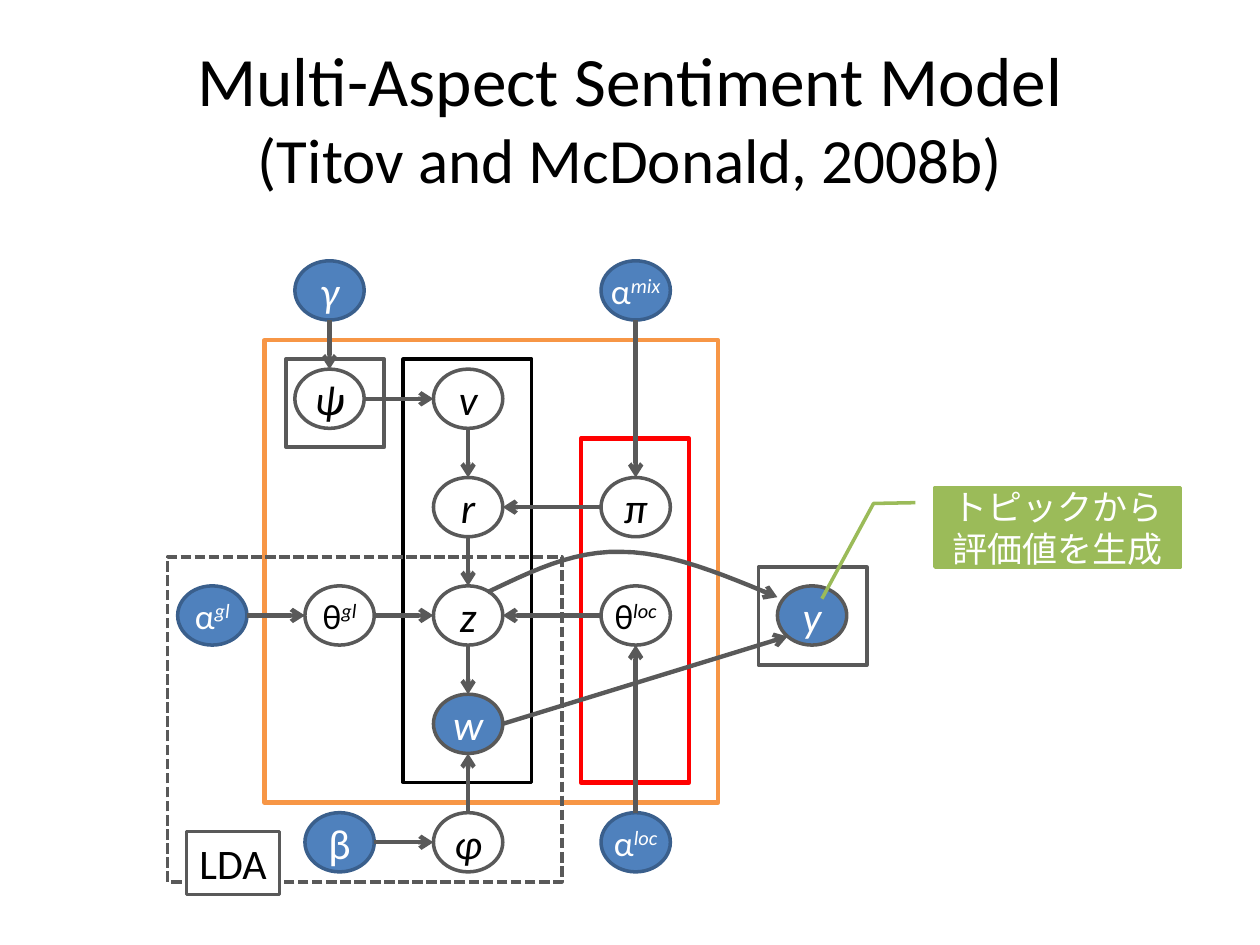
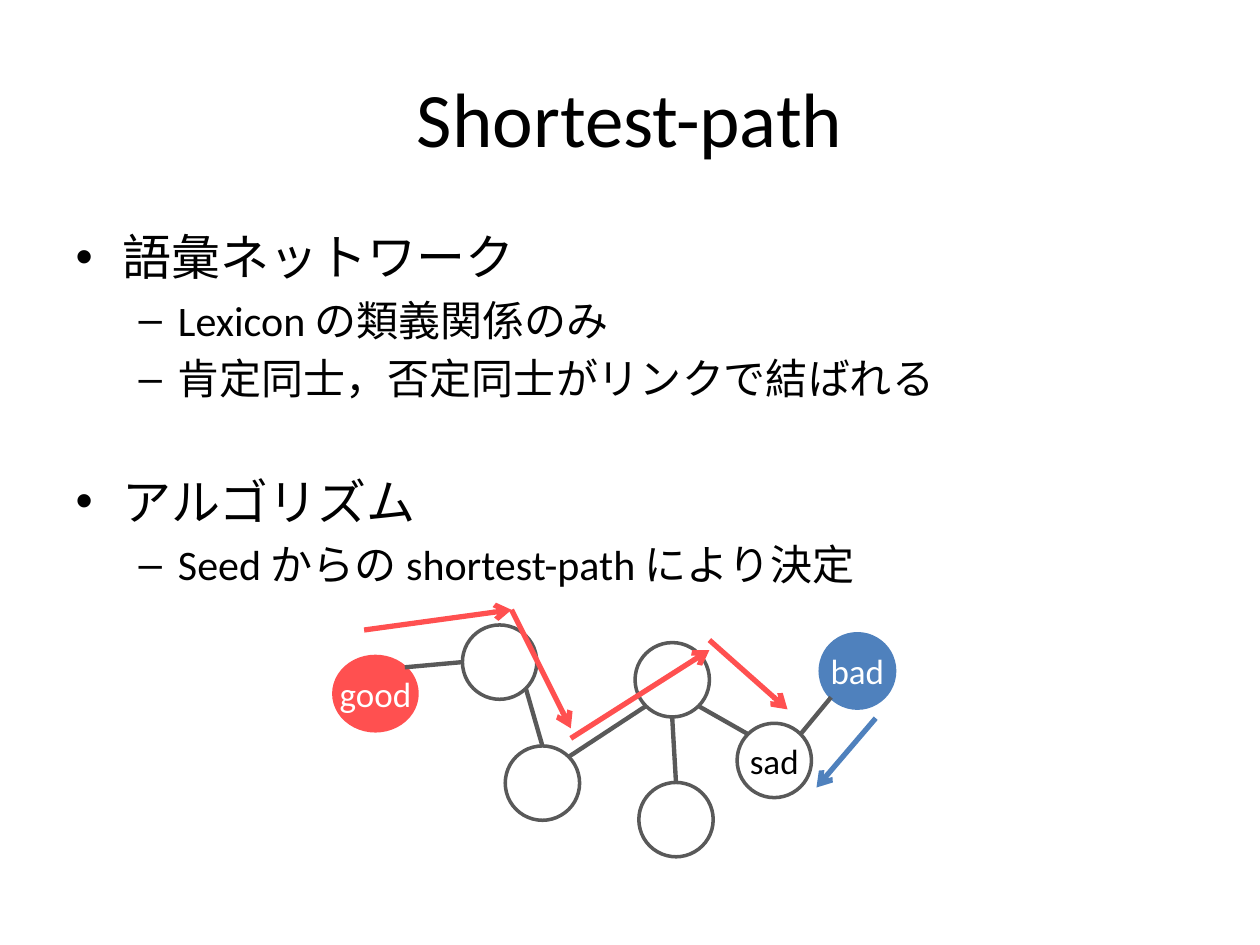
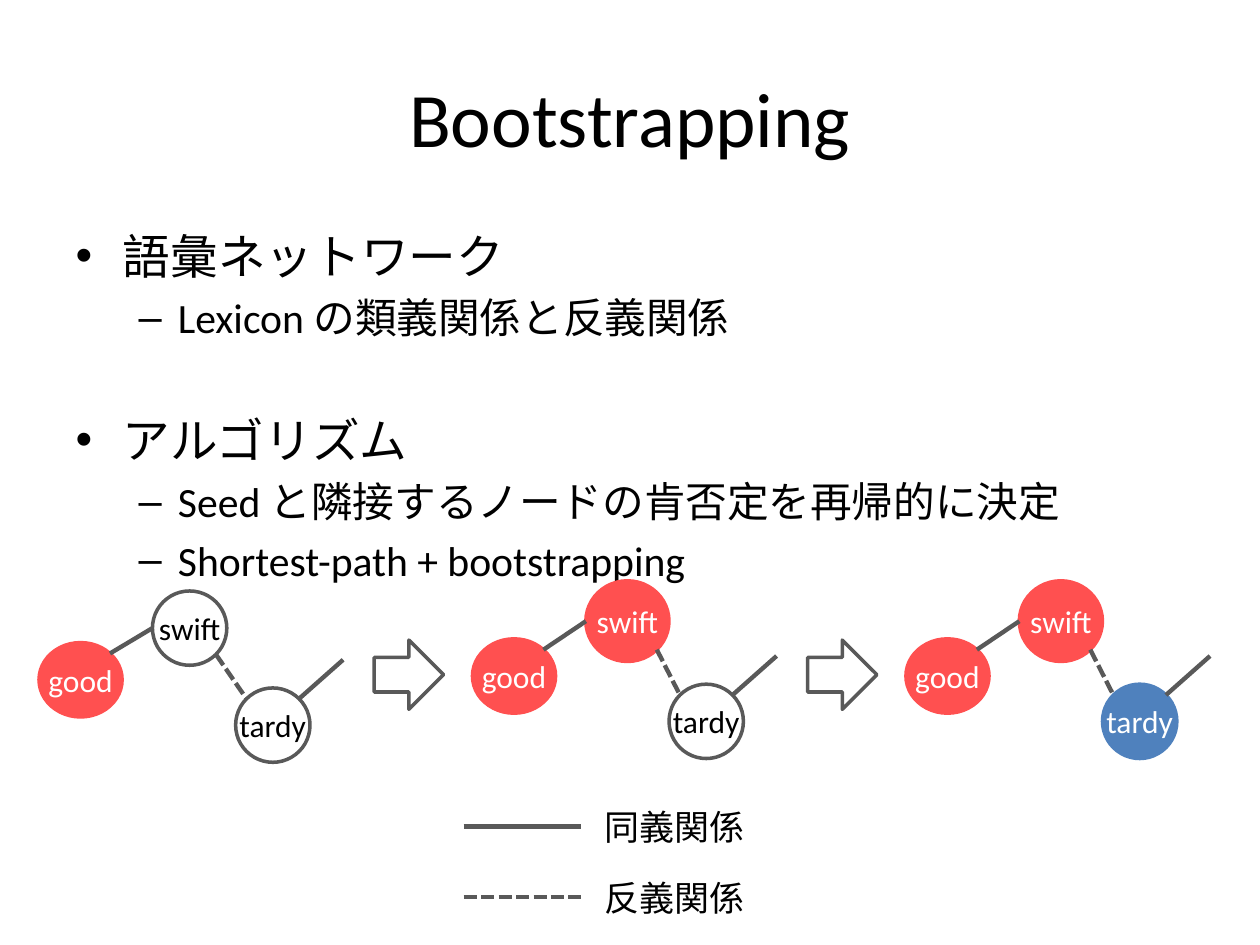
from lxml.etree import SubElement
from pptx import Presentation
from pptx.dml.color import RGBColor
from pptx.enum.dml import MSO_LINE
from pptx.enum.shapes import MSO_CONNECTOR, MSO_SHAPE
from pptx.enum.text import MSO_ANCHOR, MSO_AUTO_SIZE, PP_ALIGN
from pptx.oxml.ns import qn
from pptx.util import Inches, Pt

FONT = "Calibri"
BLACK = RGBColor(0x00, 0x00, 0x00)
WHITE = RGBColor(0xFF, 0xFF, 0xFF)
GRAY = RGBColor(0x59, 0x59, 0x59)
BLUE = RGBColor(0x4F, 0x81, 0xBD)
NAVY = RGBColor(0x3A, 0x5F, 0x8C)
ORANGE = RGBColor(0xF7, 0x96, 0x46)
RED = RGBColor(0xFF, 0x00, 0x00)
CORAL = RGBColor(0xFF, 0x50, 0x50)
GREEN = RGBColor(0x9B, 0xBB, 0x59)

TITLE_ONLY, TITLE_AND_BODY = 5, 1
DIAGONAL = 0.5 ** 0.5 / 2
SITES = {
    "N": (0.5, 0), "S": (0.5, 1), "W": (0, 0.5), "E": (1, 0.5),
    "NW": (0.5 - DIAGONAL, 0.5 - DIAGONAL), "NE": (0.5 + DIAGONAL, 0.5 - DIAGONAL),
    "SW": (0.5 - DIAGONAL, 0.5 + DIAGONAL), "SE": (0.5 + DIAGONAL, 0.5 + DIAGONAL),
}

MODEL_TITLE = [("Multi-Aspect Sentiment Model", 39.6), ("(Titov and McDonald, 2008b)", 36)]
MODEL_NODE_SIZE = (0.55, 0.47)
MODEL_COLUMNS = {"outer": 1.41, "switch": 2.34, "global": 2.42, "word": 3.44, "local": 4.77, "rating": 6.17}
MODEL_ROWS = [2.07 + 0.86 * row for row in range(5)] + [6.45]
MODEL_NODES = {
    "gamma": ("switch", 0, "γ", "", BLUE, NAVY),
    "alpha_mix": ("local", 0, "α", "mix", BLUE, NAVY),
    "psi": ("switch", 1, "ψ", "", None, GRAY),
    "v": ("word", 1, "v", "", None, GRAY),
    "r": ("word", 2, "r", "", None, GRAY),
    "pi": ("local", 2, "π", "", None, GRAY),
    "alpha_gl": ("outer", 3, "α", "gl", BLUE, NAVY),
    "theta_gl": ("global", 3, "θ", "gl", None, GRAY),
    "z": ("word", 3, "z", "", None, GRAY),
    "theta_loc": ("local", 3, "θ", "loc", None, GRAY),
    "y": ("rating", 3, "y", "", BLUE, GRAY),
    "w": ("word", 4, "w", "", BLUE, GRAY),
    "beta": ("global", 5, "β", "", BLUE, NAVY),
    "phi": ("word", 5, "φ", "", None, GRAY),
    "alpha_loc": ("local", 5, "α", "loc", BLUE, NAVY),
}
MODEL_EDGES = [
    ("gamma", "S", "psi", "N"), ("alpha_mix", "S", "pi", "N"), ("psi", "E", "v", "W"),
    ("v", "S", "r", "N"), ("pi", "W", "r", "E"), ("r", "S", "z", "N"),
    ("alpha_gl", "E", "theta_gl", "W"), ("theta_gl", "E", "z", "W"),
    ("theta_loc", "W", "z", "E"), ("z", "S", "w", "N"), ("phi", "N", "w", "S"),
    ("beta", "E", "phi", "W"), ("alpha_loc", "N", "theta_loc", "S"), ("w", "E", "y", "SW"),
]
MODEL_PLATES = [
    ((3.2, 2.85, 1.02, 3.36), BLACK, 2, False),
    ((2.1, 2.7, 3.6, 3.67), ORANGE, 2.5, False),
    ((4.61, 3.48, 0.86, 2.73), RED, 2.5, False),
    ((2.27, 2.85, 0.78, 0.7), GRAY, 2, False),
    ((6.02, 4.5, 0.86, 0.78), GRAY, 2, False),
    ((1.33, 4.42, 3.13, 2.58), GRAY, 2, True),
]
RATING_CURVE = [
    [(3.87, 4.7), (4.21, 4.54), (4.54, 4.37), (4.93, 4.38)],
    [(4.93, 4.38), (5.31, 4.38), (5.74, 4.56), (6.17, 4.74)],
]
CALLOUT_LINES = ["トピックから", "評価値を生成"]
CALLOUT_LEADER = [0.19, -0.08, 0.2, -0.25, 1.4, -0.46]

PATH_BODY = [
    (0, "語彙ネットワーク"),
    (1, "Lexicon の類義関係のみ"),
    (1, "肯定同士，否定同士がリンクで結ばれる"),
    (0, "アルゴリズム"),
    (1, "Seed からの shortest-path により決定"),
]
CIRCLE = (0.59, 0.59)
SEED_OVAL = (0.66, 0.59)
PATH_NODES = {
    "good": ((2.65, 5.21), SEED_OVAL, "good", CORAL),
    "upper": ((3.67, 4.96), CIRCLE, "", WHITE),
    "lower": ((4.01, 5.92), CIRCLE, "", WHITE),
    "middle": ((5.04, 5.1), CIRCLE, "", WHITE),
    "leaf": ((5.07, 6.21), CIRCLE, "", WHITE),
    "sad": ((5.85, 5.74), CIRCLE, "sad", WHITE),
    "bad": ((6.51, 5.03), CIRCLE, "bad", BLUE),
}
PATH_EDGES = [
    ("bad", "SW", "sad", "NE"), ("sad", "NW", "middle", "SE"), ("lower", "NE", "middle", "SW"),
    ("upper", "SE", "lower", "N"), ("upper", "W", "good", "NE"), ("middle", "S", "leaf", "N"),
]
PATH_ARROWS = [
    ((2.89, 5), (4.06, 4.84), CORAL), ((4.06, 4.84), (4.53, 5.78), CORAL),
    ((4.53, 5.86), (5.63, 5.16), CORAL), ((5.63, 5.08), (6.25, 5.63), CORAL),
    ((6.95, 5.7), (6.48, 6.25), BLUE),
]

BOOTSTRAP_BODY = [
    (0, "語彙ネットワーク"),
    (1, "Lexicon の類義関係と反義関係"),
    (0, "アルゴリズム"),
    (1, "Seed と隣接するノードの肯否定を再帰的に決定"),
    (1, "Shortest-path + bootstrapping"),
]
STAGE_LEFT, STAGE_PITCH = 0.31, 3.44
STAGES = [
    (5.1, 4.69, CIRCLE, WHITE, WHITE),
    (5.07, 4.61, (0.66, 0.64), CORAL, WHITE),
    (5.07, 4.61, (0.66, 0.64), CORAL, BLUE),
]
LEGEND = [("同義関係", False), ("反義関係", True)]


def format_run(run, size, color, italic=False):
    run.font.name = FONT
    run.font.size = Pt(size)
    run.font.color.rgb = color
    run.font.italic = italic


def style_line(line, color, width, dashed=False, arrow=False):
    line.color.rgb = color
    line.width = Pt(width)
    if dashed:
        line.dash_style = MSO_LINE.SQUARE_DOT
    if arrow:
        SubElement(line._get_or_add_ln(), qn("a:tailEnd"), type="arrow")


def add_outline(slide, kind, box, fill, color, width=2, dashed=False):
    shape = slide.shapes.add_shape(kind, *map(Inches, box))
    shape.shadow.inherit = False
    if fill is None:
        shape.fill.background()
    else:
        shape.fill.solid()
        shape.fill.fore_color.rgb = fill
    style_line(shape.line, color, width, dashed)
    return shape


def write_label(shape, lines, size, color, italic=False):
    frame = shape.text_frame
    frame.word_wrap = False
    frame.vertical_anchor = MSO_ANCHOR.MIDDLE
    frame.margin_left = frame.margin_right = frame.margin_top = frame.margin_bottom = 0
    frame.text = "\n".join(lines)
    for paragraph in frame.paragraphs:
        paragraph.alignment = PP_ALIGN.CENTER
        for run in paragraph.runs:
            format_run(run, size, color, italic)


def add_line(slide, start, end, color=GRAY, width=2.5, dashed=False, arrow=False):
    connector = slide.shapes.add_connector(MSO_CONNECTOR.STRAIGHT, *map(Inches, start + end))
    style_line(connector.line, color, width, dashed, arrow)
    SubElement(connector._element.spPr, qn("a:effectLst"))


def site(box, name):
    left, top, width, height = box
    across, down = SITES[name]
    return left + across * width, top + down * height


def add_edges(slide, boxes, edges, arrow=False):
    for source, source_site, target, target_site in edges:
        add_line(slide, site(boxes[source], source_site), site(boxes[target], target_site), arrow=arrow)


def add_word_node(slide, box, word, fill, size):
    plain = fill == WHITE
    node = add_outline(slide, MSO_SHAPE.OVAL, box, fill, GRAY if plain else fill)
    if word:
        write_label(node, [word], size, BLACK if plain else WHITE)


def add_slide(presentation, layout, title_lines):
    slide = presentation.slides.add_slide(presentation.slide_layouts[layout])
    title = slide.shapes.title
    title.left, title.top, title.width, title.height = map(Inches, (0.5, 0.3, 9, 1.25))
    title.text_frame.auto_size = MSO_AUTO_SIZE.NONE
    paragraph = title.text_frame.paragraphs[0]
    for index, (text, size) in enumerate(title_lines):
        if index:
            paragraph.add_line_break()
        run = paragraph.add_run()
        run.text = text
        format_run(run, size, BLACK)
    return slide


def fill_body(slide, items, height, sizes):
    body = slide.placeholders[1]
    body.left, body.top, body.width, body.height = map(Inches, (0.5, 1.75, 9, height))
    frame = body.text_frame
    frame.auto_size = MSO_AUTO_SIZE.NONE
    frame.text = "\n".join(text for _, text in items)
    for index, (paragraph, (level, _)) in enumerate(zip(frame.paragraphs, items)):
        paragraph.level = level
        if index and level == 0:
            paragraph.space_before = Pt(39)
        format_run(paragraph.runs[0], sizes[level], BLACK)


def curve_point(controls, t):
    weights = ((1 - t) ** 3, 3 * t * (1 - t) ** 2, 3 * t ** 2 * (1 - t), t ** 3)
    return tuple(
        Inches(sum(weight * point[axis] for weight, point in zip(weights, controls)))
        for axis in (0, 1)
    )


def add_curve(slide, segments, steps=12):
    points = [curve_point(controls, step / steps) for controls in segments for step in range(1, steps + 1)]
    builder = slide.shapes.build_freeform(*curve_point(segments[0], 0))
    builder.add_line_segments(points, close=False)
    curve = builder.convert_to_shape()
    curve.shadow.inherit = False
    curve.fill.background()
    style_line(curve.line, GRAY, 2.5, arrow=True)


def build_model_slide(presentation):
    slide = add_slide(presentation, TITLE_ONLY, MODEL_TITLE)
    for box, color, width, dashed in MODEL_PLATES:
        add_outline(slide, MSO_SHAPE.RECTANGLE, box, None, color, width, dashed)
    boxes = {}
    for name, (column, row, symbol, superscript, fill, border) in MODEL_NODES.items():
        boxes[name] = (MODEL_COLUMNS[column], MODEL_ROWS[row]) + MODEL_NODE_SIZE
        node = add_outline(slide, MSO_SHAPE.OVAL, boxes[name], fill, border)
        color = WHITE if fill else BLACK
        upright = superscript or name == "beta"
        write_label(node, [symbol], 20 if superscript else 24, color, not upright)
        if superscript:
            run = node.text_frame.paragraphs[0].add_run()
            run.text = superscript
            format_run(run, 20, color, True)
            run._r.get_or_add_rPr().set("baseline", "30000")
    add_edges(slide, boxes, MODEL_EDGES, arrow=True)
    add_curve(slide, RATING_CURVE)
    tag = add_outline(slide, MSO_SHAPE.RECTANGLE, (1.48, 6.6, 0.74, 0.5), WHITE, GRAY)
    write_label(tag, ["LDA"], 24, BLACK)
    callout = add_outline(slide, MSO_SHAPE.LINE_CALLOUT_2, (7.42, 3.87, 1.95, 0.63), GREEN, GREEN)
    for index, value in enumerate(CALLOUT_LEADER):
        callout.adjustments[index] = value
    write_label(callout, CALLOUT_LINES, 20, WHITE)


def build_path_slide(presentation):
    slide = add_slide(presentation, TITLE_AND_BODY, [("Shortest-path", 44)])
    fill_body(slide, PATH_BODY, 2.86, (28, 24))
    boxes = {}
    for name, (corner, size, word, fill) in PATH_NODES.items():
        boxes[name] = corner + size
        add_word_node(slide, boxes[name], word, fill, 20)
    add_edges(slide, boxes, PATH_EDGES)
    for start, end, color in PATH_ARROWS:
        add_line(slide, start, end, color, 3, arrow=True)


def build_bootstrap_slide(presentation):
    slide = add_slide(presentation, TITLE_AND_BODY, [("Bootstrapping", 44)])
    fill_body(slide, BOOTSTRAP_BODY, 2.63, (27.2, 23.8))
    for index, (good_top, swift_top, swift_size, swift_fill, tardy_fill) in enumerate(STAGES):
        left = STAGE_LEFT + index * STAGE_PITCH
        good = (left, good_top) + SEED_OVAL
        swift = (left + 0.9, swift_top) + swift_size
        tardy = (left + 1.56, good_top + 0.36) + CIRCLE
        add_word_node(slide, good, "good", CORAL, 18)
        add_word_node(slide, swift, "swift", swift_fill, 18)
        add_word_node(slide, tardy, "tardy", tardy_fill, 18)
        branch_x, branch_y = site(tardy, "NE")
        add_line(slide, (branch_x, branch_y), (branch_x + 0.35, branch_y - 0.31))
        add_line(slide, site(swift, "SE"), site(tardy, "NW"), dashed=True)
        add_line(slide, site(swift, "W"), site(good, "NE"))
        if index < len(STAGES) - 1:
            add_outline(slide, MSO_SHAPE.RIGHT_ARROW, (left + 2.66, 5.08, 0.55, 0.55), None, GRAY)
    for index, (meaning, dashed) in enumerate(LEGEND):
        middle = 6.56 + index * 0.56
        add_line(slide, (3.68, middle), (4.61, middle), dashed=dashed)
        label = slide.shapes.add_textbox(*map(Inches, (4.69, middle - 0.22, 1.32, 0.44)))
        write_label(label, [meaning], 20, BLACK)


def main():
    presentation = Presentation()
    presentation.slide_width, presentation.slide_height = Inches(10), Inches(7.5)
    build_model_slide(presentation)
    build_path_slide(presentation)
    build_bootstrap_slide(presentation)
    presentation.save("out.pptx")


if __name__ == "__main__":
    main()
